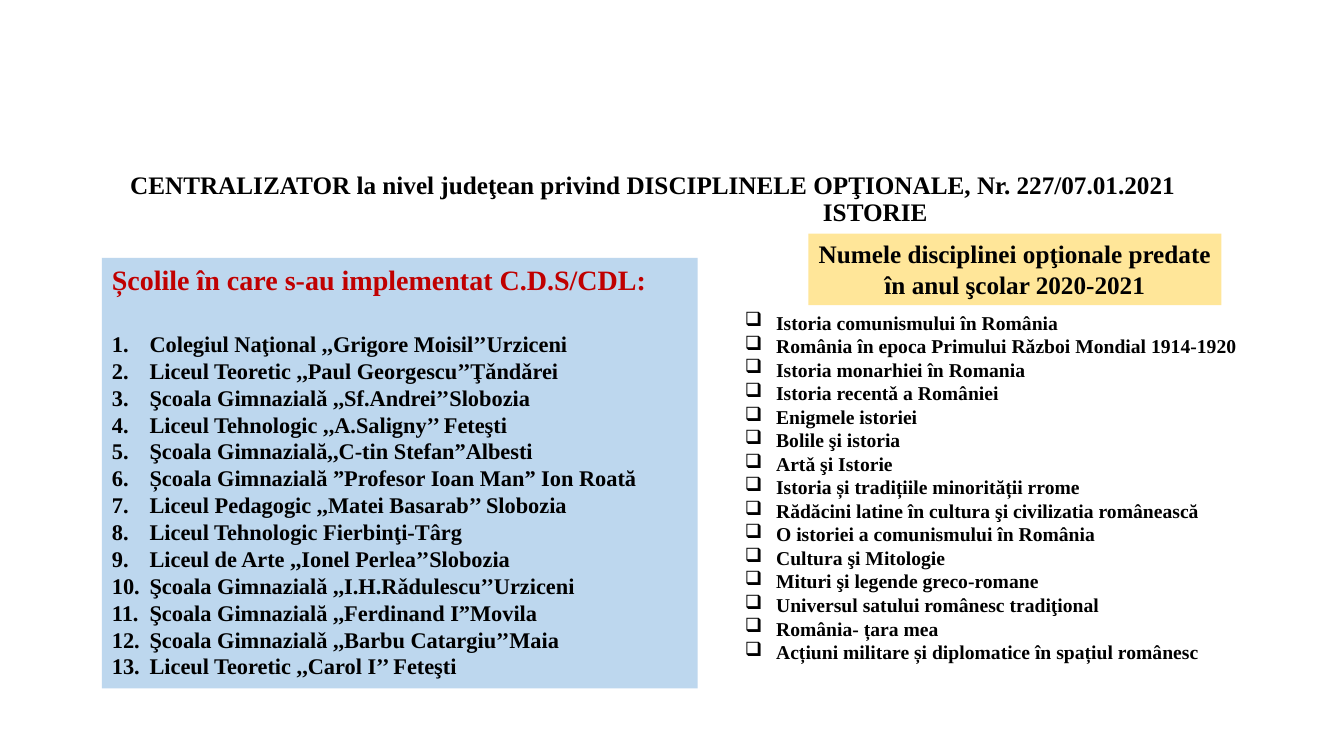
from lxml import etree
from pptx import Presentation
from pptx.dml.color import RGBColor
from pptx.enum.shapes import MSO_SHAPE
from pptx.enum.text import MSO_ANCHOR, PP_ALIGN
from pptx.oxml.ns import qn
from pptx.util import Cm, Pt

RECT = MSO_SHAPE.RECTANGLE
TOP = MSO_ANCHOR.TOP
LEFT, CENTER = PP_ALIGN.LEFT, PP_ALIGN.CENTER
FONT = "Times New Roman"

SCHOOLS = [
    "Colegiul Naţional ,,Grigore Moisil’’Urziceni",
    "Liceul Teoretic ,,Paul Georgescu’’Ţǎndǎrei",
    "Şcoala Gimnazialǎ ,,Sf.Andrei’’Slobozia",
    "Liceul Tehnologic ,,A.Saligny’’ Feteşti",
    "Şcoala Gimnazială,,C-tin Stefan”Albesti",
    "Școala Gimnazială ”Profesor Ioan Man” Ion Roată",
    "Liceul Pedagogic ,,Matei Basarab’’ Slobozia",
    "Liceul Tehnologic Fierbinţi-Târg",
    "Liceul de Arte ,,Ionel Perlea’’Slobozia",
    "Şcoala Gimnazialǎ ,,I.H.Rǎdulescu’’Urziceni",
    "Şcoala Gimnazială ,,Ferdinand I”Movila",
    "Şcoala Gimnazialǎ ,,Barbu Catargiu’’Maia",
    "Liceul Teoretic ,,Carol I’’ Feteşti",
]
COURSES = [
    "Istoria comunismului în România",
    "România în epoca Primului Rǎzboi Mondial 1914-1920",
    "Istoria monarhiei în Romania",
    "Istoria recentǎ a României",
    "Enigmele istoriei",
    "Bolile şi istoria",
    "Artǎ şi Istorie",
    "Istoria și tradițiile minorității rrome",
    "Rădăcini latine în cultura şi civilizatia românească",
    "O istoriei a comunismului în România",
    "Cultura şi Mitologie",
    "Mituri şi legende greco-romane",
    "Universul satului românesc tradiţional",
    "România- țara mea",
    "Acțiuni militare și diplomatice în spațiul românesc",
]


def add_line(tf, text, size, color="000000", align=LEFT, margin=0, hang=0,
             bullet=None, before=0, spacing=None):
    """Append a bold paragraph; bullet is an (element, attribute, value) triple."""
    p = tf.paragraphs[0] if not tf.paragraphs[0].runs else tf.add_paragraph()
    pPr = p._p.get_or_add_pPr()
    pPr.set("marL", str(Cm(margin)))
    pPr.set("indent", str(-Cm(hang)))
    if bullet:
        tag, attribute, value = bullet
        etree.SubElement(pPr, qn(tag)).set(attribute, value)
    p.alignment = align
    if before:
        p.space_before = Pt(before)
    if spacing:
        p.line_spacing = spacing
    r = p.add_run()
    r.text = text
    r.font.name, r.font.size, r.font.bold = FONT, Pt(size), True
    r.font.color.rgb = RGBColor.from_string(color)


def add_box(left, top, width, height, fill=None):
    box = [Cm(v) for v in (left, top, width, height)]
    if fill:
        sp = slide.shapes.add_shape(RECT, *box)
        sp.shadow.inherit = False
        sp.fill.solid()
        sp.fill.fore_color.rgb = RGBColor.from_string(fill)
        sp.line.fill.background()
    else:
        sp = slide.shapes.add_textbox(*box)
    tf = sp.text_frame
    tf.word_wrap = True
    tf.vertical_anchor = TOP
    return tf


prs = Presentation()
prs.slide_width, prs.slide_height = Cm(33.87), Cm(19.05)
slide = prs.slides.add_slide(prs.slide_layouts[6])

title = add_box(2.95, 4.11, 29.2, 3.68)
title.margin_top = Cm(0.25)
add_line(title, "CENTRALIZATOR la nivel judeţean privind DISCIPLINELE OPŢIONALE, "
         "Nr. 227/07.01.2021", 18, margin=0.08, spacing=0.9)
add_line(title, "ISTORIE", 18, margin=17.54, spacing=0.9)

schools = add_box(2.57, 6.5, 15.01, 10.85, fill="BDD7EE")
add_line(schools, "Școlile în care s-au implementat C.D.S/CDL:", 20, color="C00000")
for i, school in enumerate(SCHOOLS):
    add_line(schools, school, 16, margin=0.95, hang=0.95, before=0 if i else 24,
             bullet=("a:buAutoNum", "type", "arabicPeriod"))

heading = add_box(20.37, 5.89, 10.41, 1.8, fill="FFE699")
add_line(heading, "Numele disciplinei opţionale predate în anul şcolar 2020-2021",
         18, align=CENTER)

courses = add_box(18.52, 7.7, 14.12, 10.44)
for course in COURSES:
    add_line(courses, course, 14, margin=0.79, hang=0.79,
             bullet=("a:buChar", "char", "❑"))

prs.save("out.pptx")
